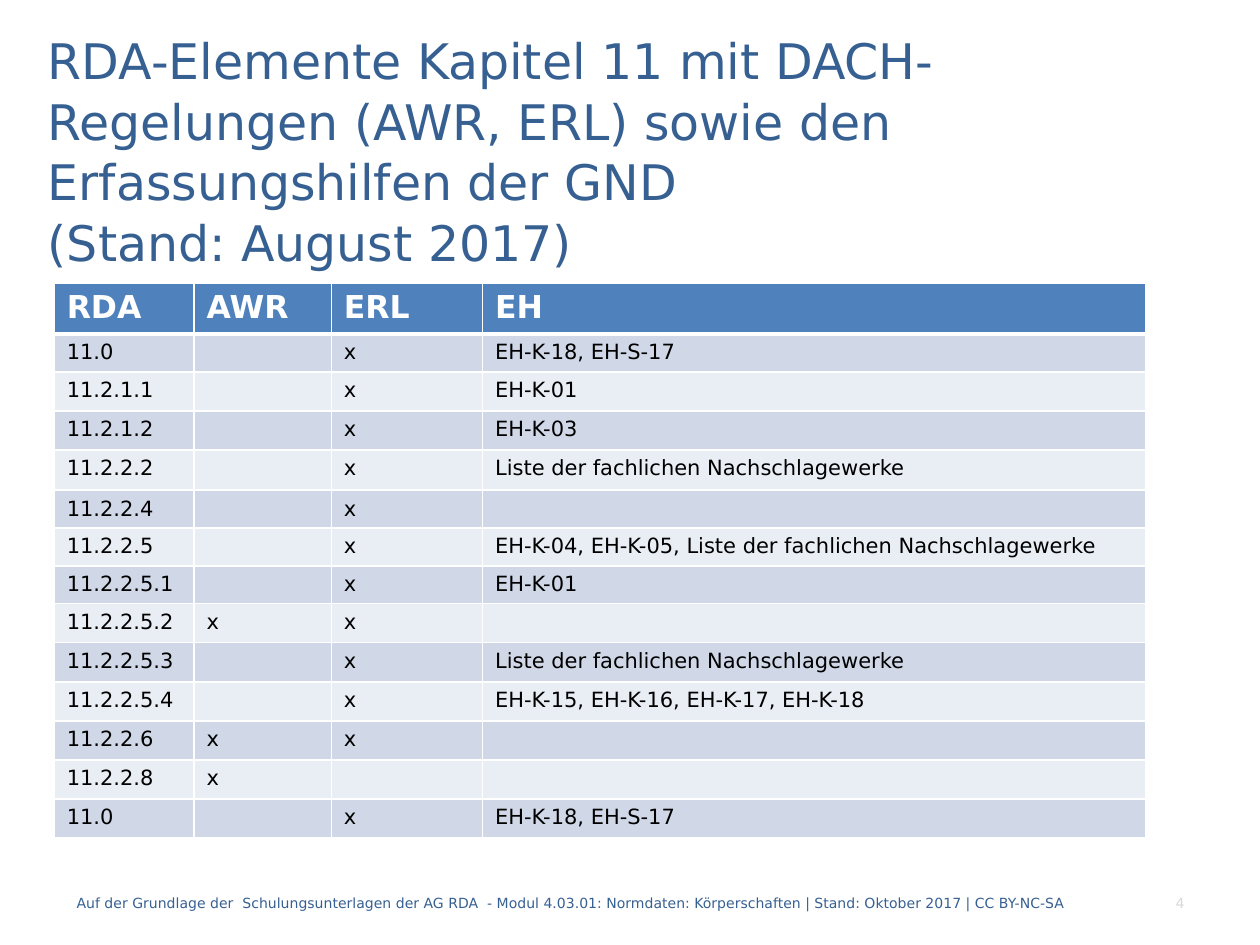
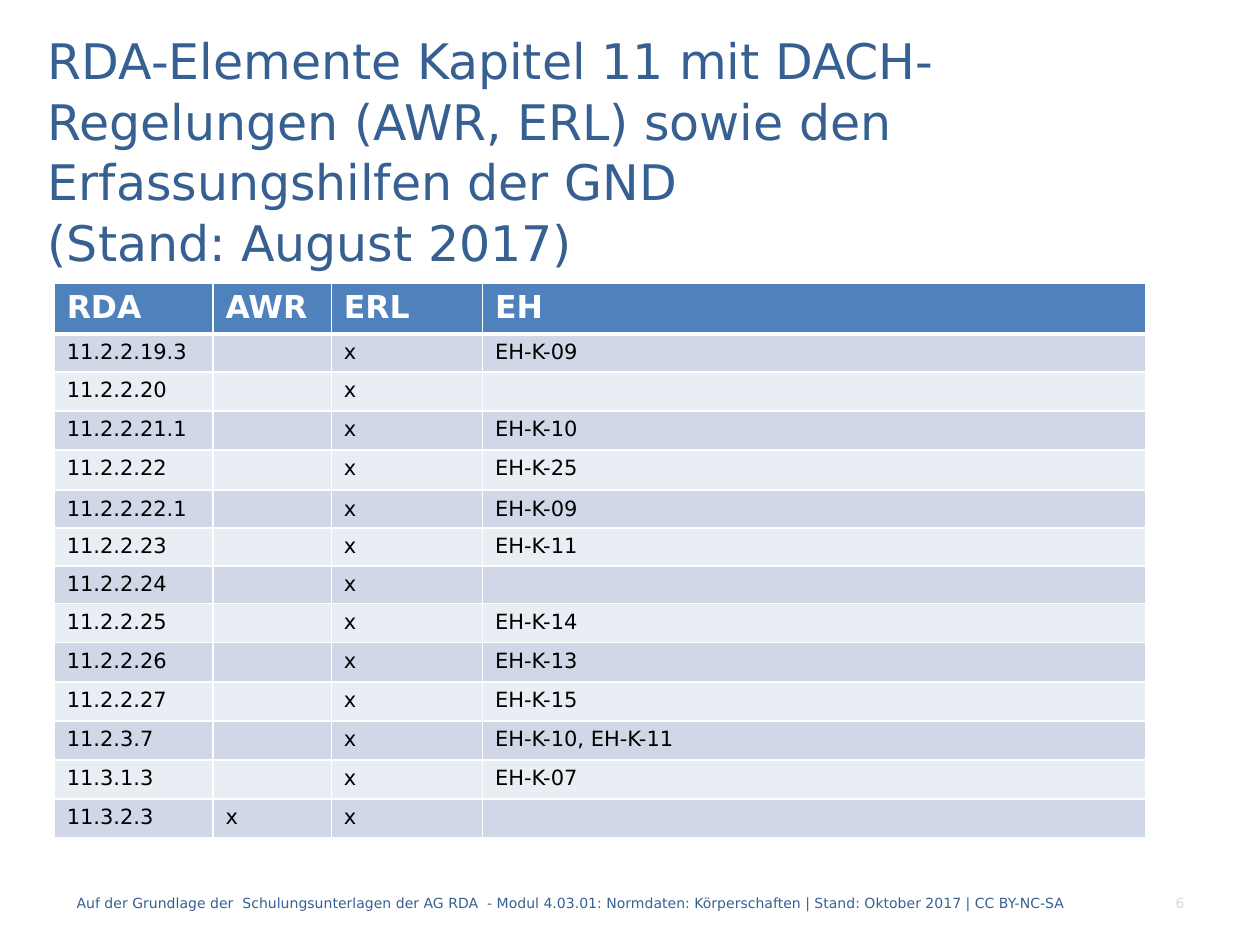
from lxml import etree
from pptx import Presentation
from pptx import util as u
from pptx.dml.color import RGBColor
from pptx.enum import text
from pptx.oxml import ns

COLORS = {
    "title": "376092",
    "number": "D9D9D9",
    "header": "4F81BD",
    "odd": "D0D8E8",
    "even": "E9EDF4",
    "white": "FFFFFF",
    "black": "000000",
}
FONT = "DejaVu Sans"
TITLE = (
    "RDA-Elemente Kapitel 11 mit DACH-Regelungen (AWR, ERL) "
    "sowie den Erfassungshilfen der GND \v(Stand: August 2017)"
)
FOOTER = (
    "Auf der Grundlage der  Schulungsunterlagen der AG RDA  - Modul 4.03.01: "
    "Normdaten: Körperschaften | Stand: Oktober 2017 | CC BY-NC-SA"
)
HEADINGS = ("RDA", "AWR", "ERL", "EH")
ROW_HEIGHTS = [0.38, 0.29, 0.31, 0.31, 0.32, 0.29, 0.29, 0.3] + [0.31] * 6
SOURCES = "Liste der fachlichen Nachschlagewerke"

PAGES = [
    {
        "number": "4",
        "widths": (1.11, 1.09, 1.2, 5.26),
        "rows": [
            ("11.0", "", "x", "EH-K-18, EH-S-17"),
            ("11.2.1.1", "", "x", "EH-K-01"),
            ("11.2.1.2", "", "x", "EH-K-03"),
            ("11.2.2.2", "", "x", SOURCES),
            ("11.2.2.4", "", "x", ""),
            ("11.2.2.5", "", "x", f"EH-K-04, EH-K-05, {SOURCES}"),
            ("11.2.2.5.1", "", "x", "EH-K-01"),
            ("11.2.2.5.2", "x", "x", ""),
            ("11.2.2.5.3", "", "x", SOURCES),
            ("11.2.2.5.4", "", "x", "EH-K-15, EH-K-16, EH-K-17, EH-K-18"),
            ("11.2.2.6", "x", "x", ""),
            ("11.2.2.8", "x", "", ""),
            ("11.0", "", "x", "EH-K-18, EH-S-17"),
        ],
    },
    {
        "number": "6",
        "widths": (1.26, 0.94, 1.2, 5.26),
        "rows": [
            ("11.2.2.19.3", "", "x", "EH-K-09"),
            ("11.2.2.20", "", "x", ""),
            ("11.2.2.21.1", "", "x", "EH-K-10"),
            ("11.2.2.22", "", "x", "EH-K-25"),
            ("11.2.2.22.1", "", "x", "EH-K-09"),
            ("11.2.2.23", "", "x", "EH-K-11"),
            ("11.2.2.24", "", "x", ""),
            ("11.2.2.25", "", "x", "EH-K-14"),
            ("11.2.2.26", "", "x", "EH-K-13"),
            ("11.2.2.27", "", "x", "EH-K-15"),
            ("11.2.3.7", "", "x", "EH-K-10, EH-K-11"),
            ("11.3.1.3", "", "x", "EH-K-07"),
            ("11.3.2.3", "x", "x", ""),
        ],
    },
]


def write(frame, words, size, color, bold=False, align=text.PP_ALIGN.LEFT):
    frame.text = words
    para = frame.paragraphs[0]
    para.alignment = align
    for span in para.runs:
        for name, value in {"name": FONT, "size": u.Pt(size), "bold": bold}.items():
            setattr(span.font, name, value)
        span.font.color.rgb = RGBColor.from_string(COLORS[color])
    if not words:
        etree.SubElement(para._p, ns.qn("a:endParaRPr"), sz=str(size * 100))
    return para


def add_borders(cell, widths):
    properties = cell._tc.get_or_add_tcPr()
    for side, points in widths.items():
        line = etree.SubElement(properties, ns.qn(f"a:ln{side}"), w=str(u.Pt(points)))
        fill = etree.SubElement(line, ns.qn("a:solidFill"))
        etree.SubElement(fill, ns.qn("a:srgbClr"), val=COLORS["white"])


deck = Presentation()
deck.slide_width = u.Inches(10)
deck.slide_height = u.Inches(7.5)

for content in PAGES:
    page = deck.slides.add_slide(deck.slide_layouts[5])

    title = page.shapes.title
    place = {"left": 0.28, "top": 0.91, "width": 9.45, "height": 0.56}
    for name, value in place.items():
        setattr(title, name, u.Inches(value))
    frame = title.text_frame
    frame.word_wrap = True
    frame.auto_size = text.MSO_AUTO_SIZE.NONE
    frame.vertical_anchor = text.MSO_ANCHOR.MIDDLE
    write(frame, TITLE, 28, "title").line_spacing = 1.03

    for words, left, width, color, align in (
        (FOOTER, 0.51, 8.58, "title", text.PP_ALIGN.LEFT),
        (content["number"], 7.91, 1.59, "number", text.PP_ALIGN.RIGHT),
    ):
        box = page.shapes.add_textbox(
            u.Inches(left), u.Inches(6.97), u.Inches(width), u.Inches(0.4)
        )
        box.text_frame.word_wrap = True
        box.text_frame.vertical_anchor = text.MSO_ANCHOR.MIDDLE
        write(box.text_frame, words, 8, color, align=align)

    rows = [HEADINGS] + content["rows"]
    table = page.shapes.add_table(
        len(rows), len(HEADINGS), u.Inches(0.43), u.Inches(2.25),
        u.Inches(sum(content["widths"])), u.Inches(sum(ROW_HEIGHTS)),
    ).table
    for column, width in zip(table.columns, content["widths"]):
        column.width = u.Inches(width)
    for index, (row, height) in enumerate(zip(rows, ROW_HEIGHTS)):
        table.rows[index].height = u.Inches(height)
        is_header = index == 0
        band = "header" if is_header else "odd" if index % 2 else "even"
        borders = {"L": 1, "R": 1, "T": 3 if index == 1 else 1, "B": 3 if is_header else 1}
        for position, words in enumerate(row):
            cell = table.cell(index, position)
            add_borders(cell, borders)
            cell.fill.solid()
            cell.fill.fore_color.rgb = RGBColor.from_string(COLORS[band])
            size, color = (18, "white") if is_header else (12, "black")
            write(cell.text_frame, words, size, color, bold=is_header)

deck.save("out.pptx")
